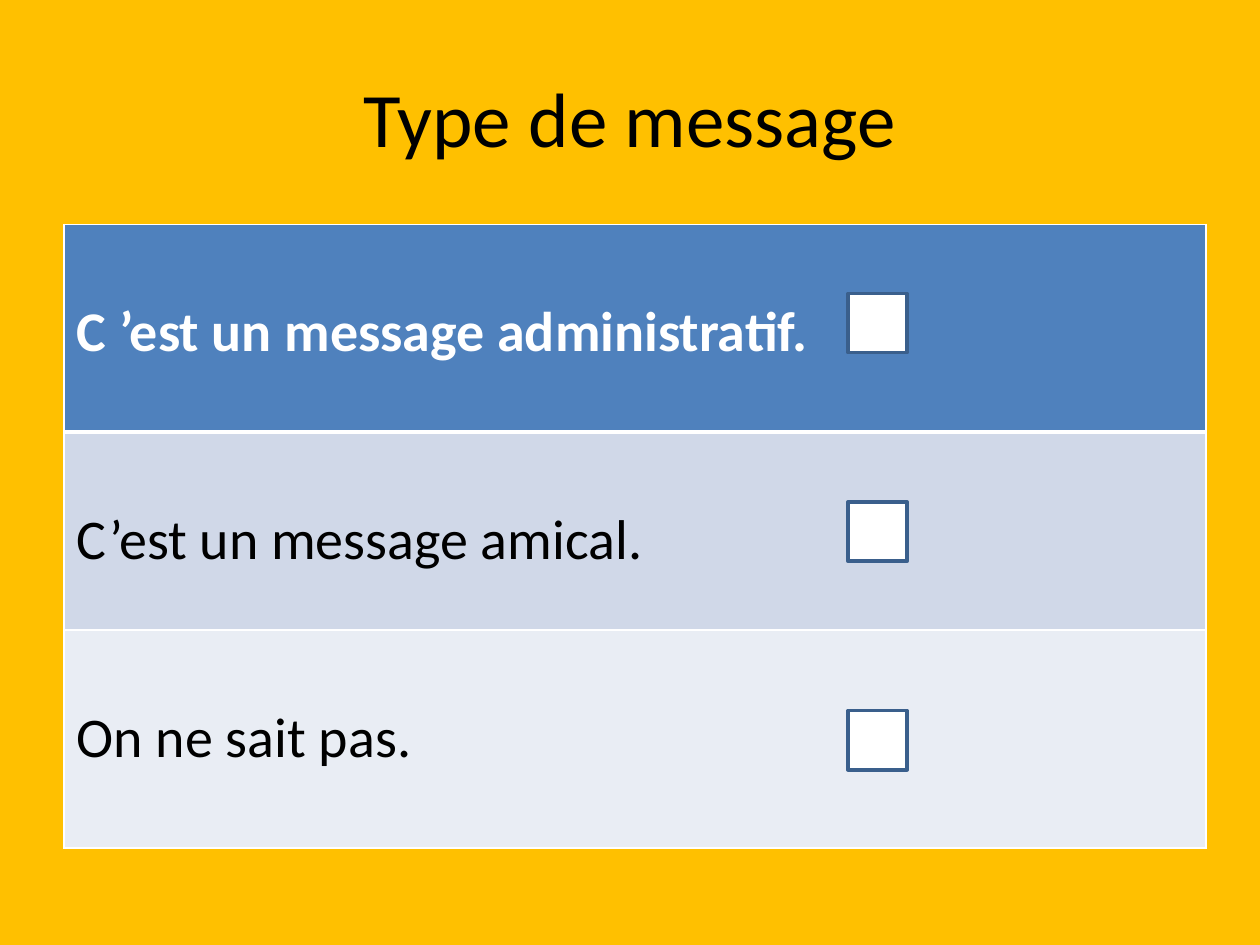
from lxml import etree
from pptx import Presentation
from pptx.dml.color import RGBColor
from pptx.enum.shapes import MSO_SHAPE
from pptx.enum.text import MSO_ANCHOR, PP_ALIGN
from pptx.oxml.ns import qn
from pptx.util import Inches, Pt

RECTANGLE = MSO_SHAPE.RECTANGLE
MIDDLE = MSO_ANCHOR.MIDDLE
TOP = MSO_ANCHOR.TOP
CENTER = PP_ALIGN.CENTER

AMBER = RGBColor(0xFF, 0xC0, 0x00)
BLACK = RGBColor(0x00, 0x00, 0x00)
WHITE = RGBColor(0xFF, 0xFF, 0xFF)
BLUE = RGBColor(0x4F, 0x81, 0xBD)
PALE_BLUE = RGBColor(0xD0, 0xD8, 0xE8)
LIGHT_BLUE = RGBColor(0xE9, 0xED, 0xF4)
DARK_BLUE = RGBColor(0x3A, 0x5F, 0x8C)

CHOICES = [
    ("C ’est un message administratif.", 1.65, BLUE, WHITE, True),
    ("C’est un message amical.", 1.57, PALE_BLUE, BLACK, False),
    ("On ne sait pas.", 1.73, LIGHT_BLUE, BLACK, False),
]


class QuizSlide:
    """Holds the slide and its style, and draws each kind of element."""

    def __init__(self, presentation, background, font_name):
        self.slide = presentation.slides.add_slide(presentation.slide_layouts[5])
        self.font_name = font_name
        fill = self.slide.background.fill
        fill.solid()
        fill.fore_color.rgb = background

    def set_text(self, frame, text, size, color, bold=False):
        frame.text = text
        font = frame.paragraphs[0].runs[0].font
        font.name = self.font_name
        font.size = Pt(size)
        font.bold = bold
        font.color.rgb = color

    def title(self, text, left, top, width, height):
        heading = self.slide.shapes.title
        heading.left, heading.top = Inches(left), Inches(top)
        heading.width, heading.height = Inches(width), Inches(height)
        self.set_text(heading.text_frame, text, 44, BLACK)
        heading.text_frame.vertical_anchor = MIDDLE
        heading.text_frame.paragraphs[0].alignment = CENTER

    def border(self, cell, widths):
        properties = cell._tc.get_or_add_tcPr()
        for position, (side, width) in enumerate(widths.items()):
            line = etree.Element(qn(f"a:ln{side}"), w=str(Pt(width)))
            fill = etree.SubElement(line, qn("a:solidFill"))
            etree.SubElement(fill, qn("a:srgbClr"), val=str(WHITE))
            properties.insert(position, line)

    def choices(self, rows, left, top, width):
        height = sum(row[1] for row in rows)
        table = self.slide.shapes.add_table(
            len(rows), 1, Inches(left), Inches(top), Inches(width), Inches(height)
        ).table
        for index, (text, row_height, fill, color, bold) in enumerate(rows):
            table.rows[index].height = Inches(row_height)
            cell = table.cell(index, 0)
            cell.fill.solid()
            cell.fill.fore_color.rgb = fill
            cell.vertical_anchor = TOP
            cell.margin_top = Inches(0.59)
            self.set_text(cell.text_frame, text, 32, color, bold)
            above = 3 if index == 1 else 1
            below = 3 if index == 0 else 1
            self.border(cell, {"L": 1, "R": 1, "T": above, "B": below})

    def checkbox(self, left, top, size):
        box = self.slide.shapes.add_shape(
            RECTANGLE, Inches(left), Inches(top), Inches(size), Inches(size)
        )
        box.shadow.inherit = False
        box.fill.solid()
        box.fill.fore_color.rgb = WHITE
        box.line.color.rgb = DARK_BLUE
        box.line.width = Pt(2)


def main():
    presentation = Presentation()
    presentation.slide_width = Inches(10)
    presentation.slide_height = Inches(7.5)
    quiz = QuizSlide(presentation, AMBER, "Calibri")
    quiz.title("Type de message", 0.5, 0.3, 9, 1.25)
    quiz.choices(CHOICES, 0.51, 1.78, 9.06)
    checkbox_step = (5.64 - 2.33) / (len(CHOICES) - 1)
    for index in range(len(CHOICES)):
        quiz.checkbox(6.73, 2.33 + index * checkbox_step, 0.47)
    presentation.save("out.pptx")


if __name__ == "__main__":
    main()
